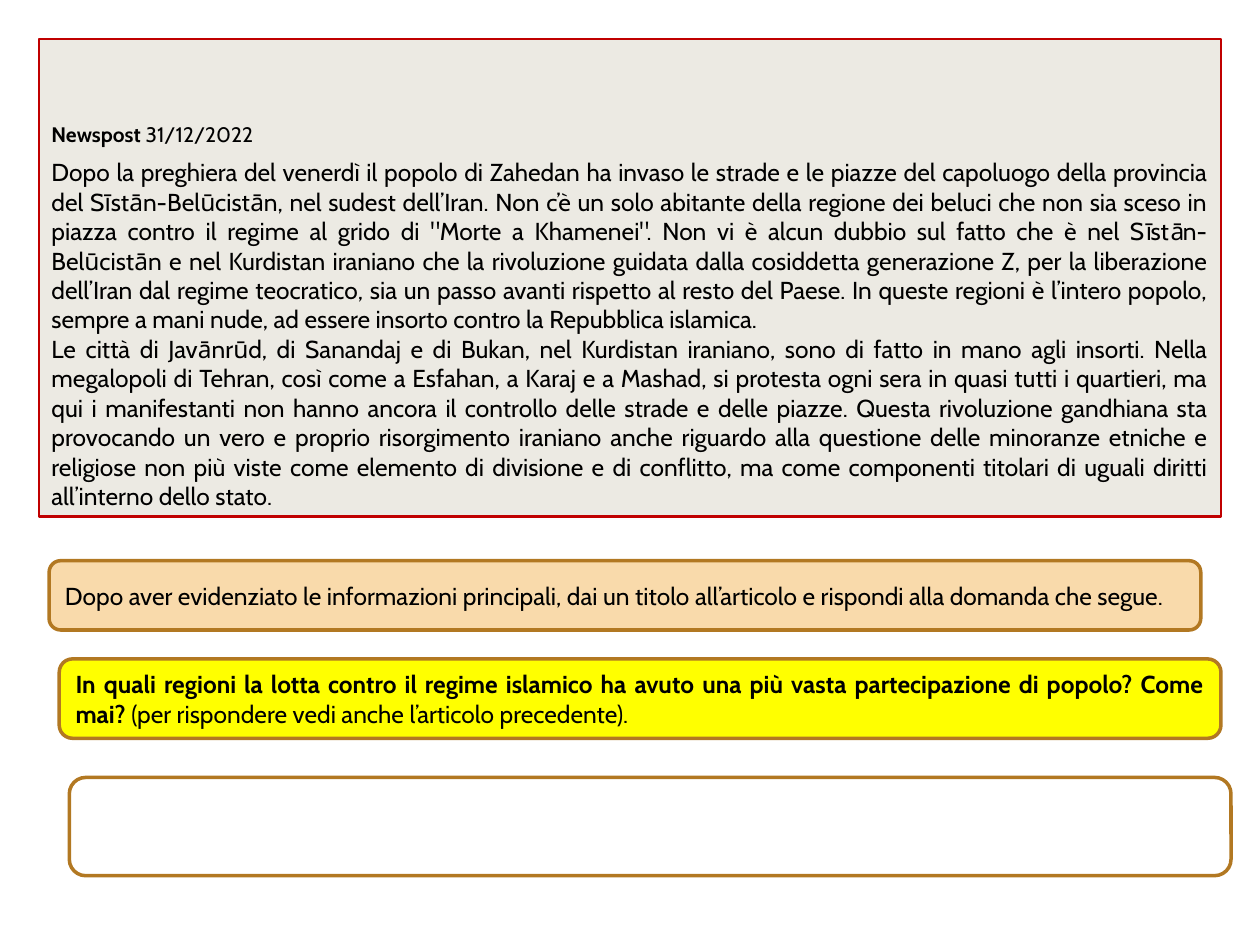
import pptx
import pptx.dml.color
import pptx.enum.shapes
import pptx.enum.text
import pptx.util

Inches = pptx.util.Inches
RGBColor = pptx.dml.color.RGBColor
Shape = pptx.enum.shapes.MSO_SHAPE
Anchor = pptx.enum.text.MSO_ANCHOR

BLACK = RGBColor(0x00, 0x00, 0x00)
WHITE = RGBColor(0xFF, 0xFF, 0xFF)
STONE = RGBColor(0xEC, 0xEA, 0xE3)
RED = RGBColor(0xC0, 0x00, 0x00)
PEACH = RGBColor(0xF9, 0xDA, 0xAB)
YELLOW = RGBColor(0xFF, 0xFF, 0x00)
BROWN = RGBColor(0xB2, 0x78, 0x22)

ARTICLE = (
    "Dopo la preghiera del venerdì il popolo di Zahedan ha invaso le strade e le piazze "
    "del capoluogo della provincia del Sīstān-Belūcistān, nel sudest dell’Iran. Non c’è un "
    "solo abitante della regione dei beluci che non sia sceso in piazza contro il regime al "
    "grido di \"Morte a Khamenei\". Non vi è alcun dubbio sul fatto che è nel "
    "Sīstān-Belūcistān e nel Kurdistan iraniano che la rivoluzione guidata dalla cosiddetta "
    "generazione Z, per la liberazione dell’Iran dal regime teocratico, sia un passo avanti "
    "rispetto al resto del Paese. In queste regioni è l’intero popolo, sempre a mani nude, "
    "ad essere insorto contro la Repubblica islamica.",
    "Le città di Javānrūd, di Sanandaj e di Bukan, nel Kurdistan iraniano, sono di fatto in "
    "mano agli insorti. Nella megalopoli di Tehran, così come a Esfahan, a Karaj e a Mashad, "
    "si protesta ogni sera in quasi tutti i quartieri, ma qui i manifestanti non hanno ancora "
    "il controllo delle strade e delle piazze. Questa rivoluzione gandhiana sta provocando un "
    "vero e proprio risorgimento iraniano anche riguardo alla questione delle minoranze "
    "etniche e religiose non più viste come elemento di divisione e di conflitto, ma come "
    "componenti titolari di uguali diritti all’interno dello stato.",
)
TASK = ("Dopo aver evidenziato le informazioni principali, dai un titolo all’articolo "
        "e rispondi alla domanda che segue.")
QUESTION = ("In quali regioni la lotta contro il regime islamico ha avuto una più vasta "
            "partecipazione di popolo? Come mai? ")
HINT = "(per rispondere vedi anche l’articolo precedente)."


def add_box(slide, kind, bounds, fill, line, width, anchor=Anchor.MIDDLE):
    shape = slide.shapes.add_shape(kind, *map(Inches, bounds))
    shape.shadow.inherit = False
    shape.fill.solid()
    shape.fill.fore_color.rgb = fill
    shape.line.color.rgb = line
    shape.line.width = pptx.util.Pt(width)
    shape.text_frame.word_wrap = True
    shape.text_frame.vertical_anchor = anchor
    return shape


def write_paragraph(paragraph, runs, size=14, space_after=0):
    """Fill a justified paragraph with (text, bold) runs."""
    paragraph.alignment = pptx.enum.text.PP_ALIGN.JUSTIFY
    paragraph.space_after = pptx.util.Pt(space_after)
    for text, bold in runs:
        run = paragraph.add_run()
        run.text = text
        run.font.color.rgb = BLACK
        font_format = {"name": "Cabin", "size": pptx.util.Pt(size), "bold": bold}
        for attribute, value in font_format.items():
            setattr(run.font, attribute, value)


def add_article(slide):
    box = add_box(slide, Shape.RECTANGLE, (0.31, 0.31, 9.38, 3.79),
                  STONE, RED, 1.5, Anchor.BOTTOM)
    frame = box.text_frame
    write_paragraph(frame.paragraphs[0], [("Newspost ", True), ("31/12/2022", False)],
                    size=12, space_after=6)
    for text in ARTICLE:
        write_paragraph(frame.add_paragraph(), [(text, False)])


def add_rounded_box(slide, bounds, fill, runs=()):
    box = add_box(slide, Shape.ROUNDED_RECTANGLE, bounds, fill, BROWN, 2)
    write_paragraph(box.text_frame.paragraphs[0], runs)


def main():
    presentation = pptx.Presentation()
    presentation.slide_width = Inches(10)
    presentation.slide_height = Inches(7.5)
    slide = presentation.slides.add_slide(presentation.slide_layouts[6])

    add_article(slide)
    add_rounded_box(slide, (0.47, 5.23, 9.22, 0.63), YELLOW,
                    [(QUESTION, True), (HINT, False)])
    add_rounded_box(slide, (0.55, 6.17, 9.22, 0.78), WHITE)
    add_rounded_box(slide, (0.39, 4.45, 9.14, 0.55), PEACH, [(TASK, False)])
    presentation.save("out.pptx")


if __name__ == "__main__":
    main()
